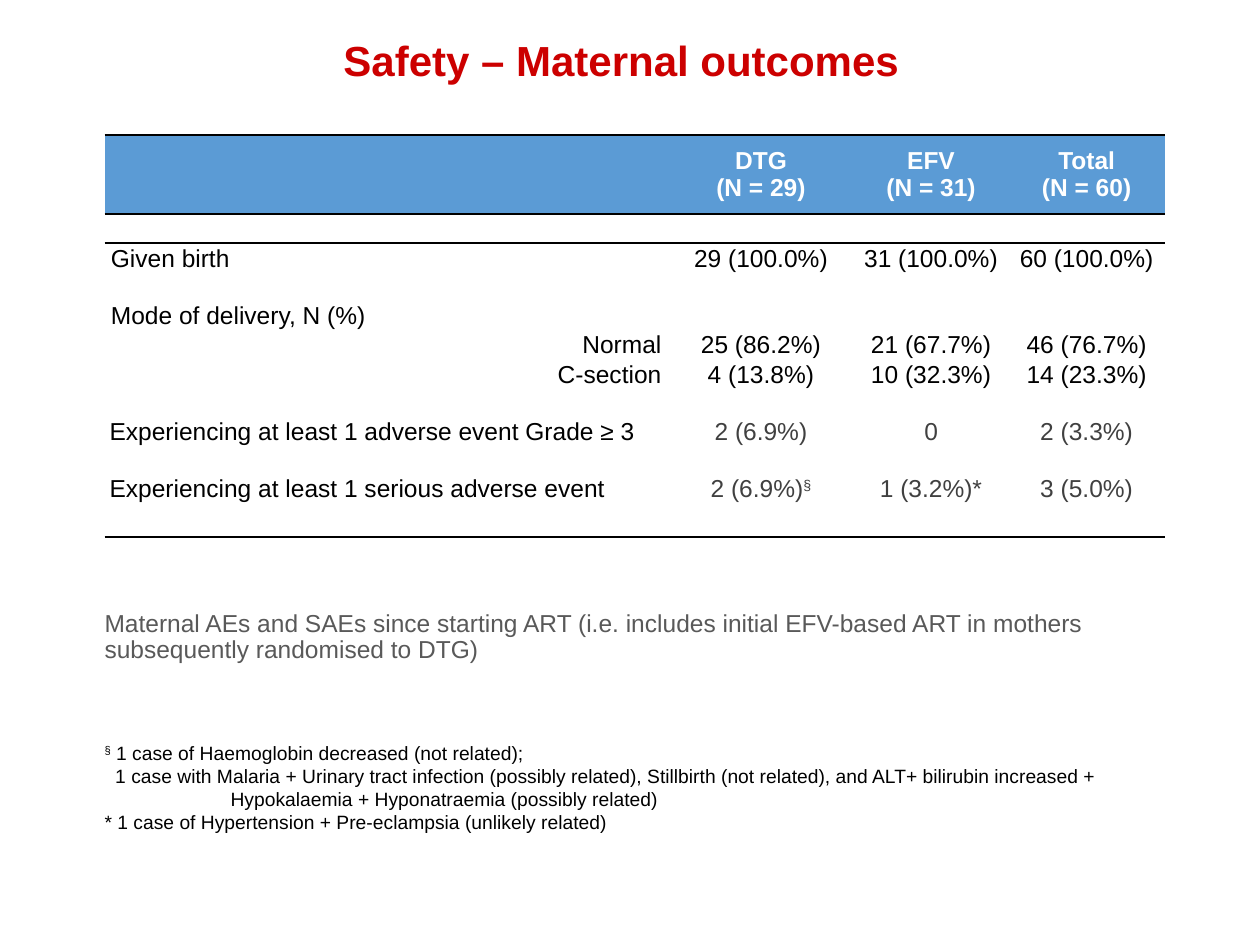
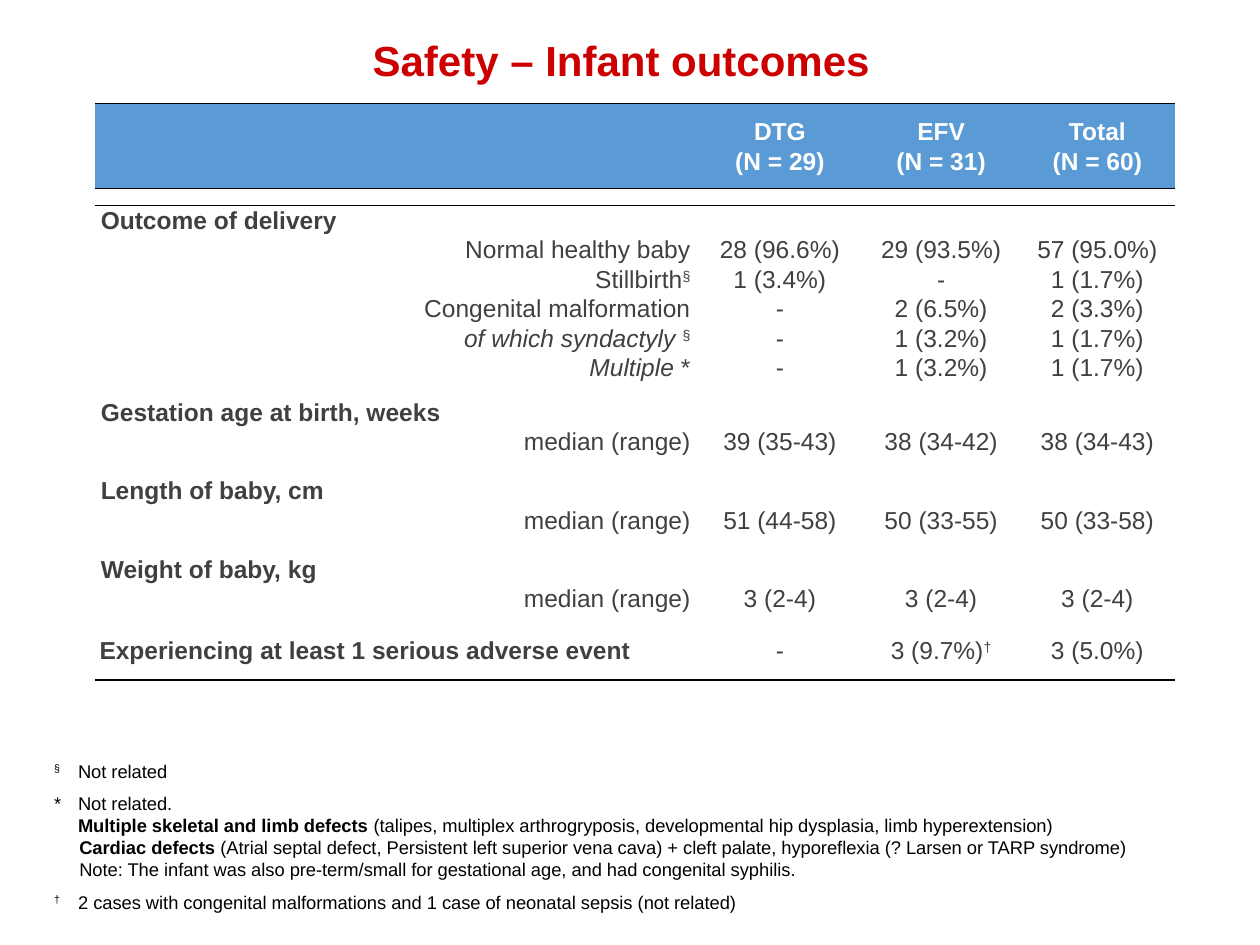
from dataclasses import dataclass
from typing import Any

from lxml import etree
from pptx import Presentation
from pptx.dml.color import RGBColor
from pptx.enum.text import MSO_ANCHOR, MSO_AUTO_SIZE, PP_ALIGN
from pptx.oxml.ns import qn
from pptx.util import Inches, Length, Pt

LEFT, CENTER, RIGHT = PP_ALIGN.LEFT, PP_ALIGN.CENTER, PP_ALIGN.RIGHT
TOP, MIDDLE = MSO_ANCHOR.TOP, MSO_ANCHOR.MIDDLE
NO_AUTOFIT = MSO_AUTO_SIZE.NONE
SLIDE_WIDTH, SLIDE_HEIGHT = Inches(10), Inches(7.5)
GRID_COLUMNS, GRID_ROWS = 100, 75
TITLE_ONLY_LAYOUT = 5
PLAIN_TABLE_STYLE = "{2D5ABB26-0587-4C30-8999-92F81FD0307C}"


@dataclass(frozen=True)
class Theme:
    font: str = "Arial"
    title: str = "CC0000"
    header: str = "5B9BD5"
    white: str = "FFFFFF"
    black: str = "000000"
    dark: str = "404040"
    grey: str = "595959"
    title_size: float = 24
    body_size: float = 14
    maternal_note_size: float = 11
    infant_note_size: float = 10.5
    spacer_size: float = 4
    rule_width: float = 1
    tight: float = 0.9
    loose: float = 1.07


THEME = Theme()


@dataclass(frozen=True)
class Box:
    column: float
    row: float
    columns: float
    rows: float

    def lengths(self) -> tuple[Length, Length, Length, Length]:
        return across(self.column), down(self.row), across(self.columns), down(self.rows)


@dataclass(frozen=True)
class Span:
    text: str
    bold: bool = False
    italic: bool = False
    raised: bool = False


Text = str | tuple[Span, ...]


@dataclass(frozen=True)
class Style:
    size: float
    color: str
    bold: bool = False
    align: Any = LEFT
    line_spacing: float = 1.0


@dataclass(frozen=True)
class Line:
    text: Text
    margin: float = 0
    hanging: float = 0
    space_before: float = 0


@dataclass(frozen=True)
class Row:
    rows: float
    label: Text = ""
    values: tuple[Text, ...] = ("", "", "")
    label_align: Any = LEFT
    bold: bool = False
    label_color: str = THEME.dark
    value_color: str = THEME.dark
    inset: float = 0.5


@dataclass(frozen=True)
class OutcomeTable:
    column: float
    row: float
    widths: tuple[float, ...]
    header_rows: float
    header_spacing: float
    body: tuple[Row, ...]


def across(columns: float) -> Length:
    return Length(round(SLIDE_WIDTH * columns / GRID_COLUMNS))


def down(rows: float) -> Length:
    return Length(round(SLIDE_HEIGHT * rows / GRID_ROWS))


def set_attributes(target: Any, values: dict[str, Any]) -> None:
    for name, value in values.items():
        setattr(target, name, value)


def write_lines(frame: Any, lines: tuple[Line, ...], style: Style) -> None:
    for index, line in enumerate(lines):
        paragraph = frame.paragraphs[0] if index == 0 else frame.add_paragraph()
        set_attributes(paragraph, {
            "alignment": style.align,
            "line_spacing": style.line_spacing,
            "space_before": Pt(line.space_before),
        })
        properties = paragraph._p.get_or_add_pPr()
        properties.set("marL", str(across(line.margin)))
        properties.set("indent", str(-across(line.hanging)))
        spans = (Span(line.text),) if isinstance(line.text, str) else line.text
        for span in spans:
            run = paragraph.add_run()
            run.text = span.text
            set_attributes(run.font, {
                "name": THEME.font,
                "size": Pt(style.size),
                "bold": style.bold or span.bold,
                "italic": span.italic,
            })
            run.font.color.rgb = RGBColor.from_string(style.color)
            if span.raised:
                run.font._element.set("baseline", "30000")


def prepare_frame(frame: Any, anchor: Any) -> None:
    set_attributes(frame, {
        "word_wrap": True,
        "auto_size": NO_AUTOFIT,
        "vertical_anchor": anchor,
        "margin_left": 0,
        "margin_right": 0,
        "margin_top": 0,
        "margin_bottom": 0,
    })


def add_titled_slide(presentation: Any, title: str) -> Any:
    slide = presentation.slides.add_slide(presentation.slide_layouts[TITLE_ONLY_LAYOUT])
    shape = slide.shapes.title
    places = Box(4.3, 1.3, 90, 7.4).lengths()
    set_attributes(shape, dict(zip(("left", "top", "width", "height"), places)))
    prepare_frame(shape.text_frame, MIDDLE)
    style = Style(THEME.title_size, THEME.title, True, CENTER, THEME.tight)
    write_lines(shape.text_frame, (Line(title),), style)
    return slide


def add_note(slide: Any, box: Box, lines: tuple[Line, ...], style: Style) -> None:
    shape = slide.shapes.add_textbox(*box.lengths())
    prepare_frame(shape.text_frame, TOP)
    write_lines(shape.text_frame, lines, style)


def add_rule(cell: Any, side: str) -> None:
    rule = etree.Element(qn(f"a:{side}"), w=str(Pt(THEME.rule_width)))
    fill = etree.SubElement(rule, qn("a:solidFill"))
    etree.SubElement(fill, qn("a:srgbClr"), val=THEME.black)
    cell._tc.get_or_add_tcPr().insert(0, rule)


def write_cell(cell: Any, text: Text, style: Style, inset: float) -> None:
    set_attributes(cell, {
        "vertical_anchor": MIDDLE,
        "margin_left": across(inset),
        "margin_right": across(inset),
        "margin_top": 0,
        "margin_bottom": 0,
    })
    if text:
        parts = text.split("\n") if isinstance(text, str) else [text]
        write_lines(cell.text_frame, tuple(Line(part) for part in parts), style)
    else:
        ending = cell.text_frame.paragraphs[0]._p.get_or_add_endParaRPr()
        ending.set("sz", str(round(THEME.spacer_size * 100)))


def add_outcome_table(slide: Any, outcome: OutcomeTable) -> None:
    heights = [outcome.header_rows] + [row.rows for row in outcome.body]
    box = Box(outcome.column, outcome.row, sum(outcome.widths), sum(heights))
    table = slide.shapes.add_table(len(heights), len(outcome.widths), *box.lengths()).table
    set_attributes(table, {"first_row": False, "horz_banding": False})
    table._tbl.tblPr.find(qn("a:tableStyleId")).text = PLAIN_TABLE_STYLE
    for column, width in zip(table.columns, outcome.widths):
        column.width = across(width)
    for row, height in zip(table.rows, heights):
        row.height = down(height)

    header_style = Style(THEME.body_size, THEME.white, True, CENTER, outcome.header_spacing)
    for index, text in enumerate(("", "DTG\n(N = 29)", "EFV\n(N = 31)", "Total\n(N = 60)")):
        cell = table.cell(0, index)
        write_cell(cell, text, header_style, 0.5)
        cell.fill.solid()
        cell.fill.fore_color.rgb = RGBColor.from_string(THEME.header)
        add_rule(cell, "lnB")
        add_rule(cell, "lnT")

    for row_index, row in enumerate(outcome.body, 1):
        label_style = Style(THEME.body_size, row.label_color, row.bold, row.label_align, THEME.loose)
        value_style = Style(THEME.body_size, row.value_color, False, CENTER, THEME.loose)
        for index, text in enumerate((row.label, *row.values)):
            cell = table.cell(row_index, index)
            write_cell(cell, text, value_style if index else label_style, row.inset if index == 0 else 0.4)
            cell.fill.background()
            if row_index == 1:
                add_rule(cell, "lnT")
            if row_index == len(outcome.body):
                add_rule(cell, "lnB")


TEXT_ROWS = 2.3


def heading(label: str) -> Row:
    return Row(TEXT_ROWS, label, bold=True)


def detail(label: Text, *values: Text) -> Row:
    return Row(TEXT_ROWS, label, values, RIGHT)


def black_row(label: str, values: tuple[Text, ...] = ("", "", ""), align: Any = LEFT) -> Row:
    return Row(TEXT_ROWS, label, values, align, False, THEME.black, THEME.black)


def event_row(label: str, values: tuple[Text, ...], bold: bool, color: str) -> Row:
    return Row(TEXT_ROWS, label, values, LEFT, bold, color, inset=0.4)


SECTION = Span("§", raised=True)
DAGGER = Span("†", raised=True)
SERIOUS_EVENT = "Experiencing at least 1 serious adverse event"

MATERNAL = OutcomeTable(8.3, 10.7, (44.7, 14.8, 12.2, 12.5), 6.3, 1.0, (
    Row(2.3),
    black_row("Given birth", ("29 (100.0%)", "31 (100.0%)", "60 (100.0%)")),
    Row(2.2),
    black_row("Mode of delivery, N (%)"),
    black_row("Normal", ("25 (86.2%)", "21 (67.7%)", "46 (76.7%)"), RIGHT),
    black_row("C-section", ("4 (13.8%)", "10 (32.3%)", "14 (23.3%)"), RIGHT),
    Row(2.2),
    event_row("Experiencing at least 1 adverse event Grade ≥ 3",
              ("2 (6.9%)", "0", "2 (3.3%)"), False, THEME.black),
    Row(2.2),
    event_row(SERIOUS_EVENT,
              ((Span("2 (6.9%)"), SECTION), "1 (3.2%)*", "3 (5.0%)"), False, THEME.black),
    Row(2.7),
))

INFANT = OutcomeTable(7.5, 8.2, (47.8, 13.2, 12.4, 12.4), 6.75, THEME.loose, (
    Row(1.35),
    heading("Outcome of delivery"),
    detail("Normal healthy baby", "28 (96.6%)", "29 (93.5%)", "57 (95.0%)"),
    detail((Span("Stillbirth"), SECTION), "1 (3.4%)", "-", "1 (1.7%)"),
    detail("Congenital malformation", "-", "2 (6.5%)", "2 (3.3%)"),
    detail((Span("of which syndactyly ", italic=True), SECTION), "-", "1 (3.2%)", "1 (1.7%)"),
    detail((Span("Multiple ", italic=True), Span("*")), "-", "1 (3.2%)", "1 (1.7%)"),
    Row(1.2),
    heading("Gestation age at birth, weeks"),
    detail("median (range)", "39 (35-43)", "38 (34-42)", "38 (34-43)"),
    Row(1.55),
    heading("Length of baby, cm"),
    detail("median (range)", "51 (44-58)", "50 (33-55)", "50 (33-58)"),
    Row(1.55),
    heading("Weight of baby, kg"),
    detail("median (range)", "3 (2-4)", "3 (2-4)", "3 (2-4)"),
    Row(1.8),
    event_row(SERIOUS_EVENT, ("-", (Span("3 (9.7%)"), DAGGER), "3 (5.0%)"), True, THEME.dark),
    Row(1.2),
))

MATERNAL_NOTES = (
    Line((SECTION, Span(" 1 case of Haemoglobin decreased (not related);"))),
    Line("1 case with Malaria + Urinary tract infection (possibly related), Stillbirth (not related), "
         "and ALT+ bilirubin increased +", 0.85),
    Line("Hypokalaemia + Hyponatraemia (possibly related)", 10),
    Line("* 1 case of Hypertension + Pre-eclampsia (unlikely related)"),
)

INFANT_NOTES = (
    Line((SECTION, Span("\tNot related")), 1.9, 1.9),
    Line("*\tNot related.", 1.9, 1.9, 6),
    Line((Span("Multiple skeletal and limb defects ", bold=True),
          Span("(talipes, multiplex arthrogryposis, developmental hip dysplasia, limb hyperextension)")), 1.9),
    Line((Span("Cardiac defects ", bold=True),
          Span("(Atrial septal defect, Persistent left superior vena cava) + cleft palate, "
               "hyporeflexia (? Larsen or TARP syndrome)")), 2),
    Line("Note: The infant was also pre-term/small for gestational age, and had congenital syphilis.", 2),
    Line((DAGGER, Span("\t2 cases with congenital malformations and 1 case of neonatal sepsis (not related)")),
         1.9, 1.9, 6),
)

TREATMENT_NOTE = (Line("Maternal AEs and SAEs since starting ART (i.e. includes initial EFV-based ART "
                       "in mothers subsequently randomised to DTG)"),)


def main() -> None:
    presentation = Presentation()
    set_attributes(presentation, {"slide_width": SLIDE_WIDTH, "slide_height": SLIDE_HEIGHT})

    slide = add_titled_slide(presentation, "Safety – Maternal outcomes")
    add_outcome_table(slide, MATERNAL)
    add_note(slide, Box(8.3, 58.8, 86.7, 8.7), MATERNAL_NOTES, Style(THEME.maternal_note_size, THEME.black))
    add_note(slide, Box(8.3, 48.5, 84.3, 5.5), TREATMENT_NOTE,
             Style(THEME.body_size, THEME.grey, line_spacing=THEME.tight))

    slide = add_titled_slide(presentation, "Safety – Infant outcomes")
    add_outcome_table(slide, INFANT)
    add_note(slide, Box(4.3, 60.3, 90, 13.1), INFANT_NOTES, Style(THEME.infant_note_size, THEME.black))

    presentation.save("out.pptx")


if __name__ == "__main__":
    main()
